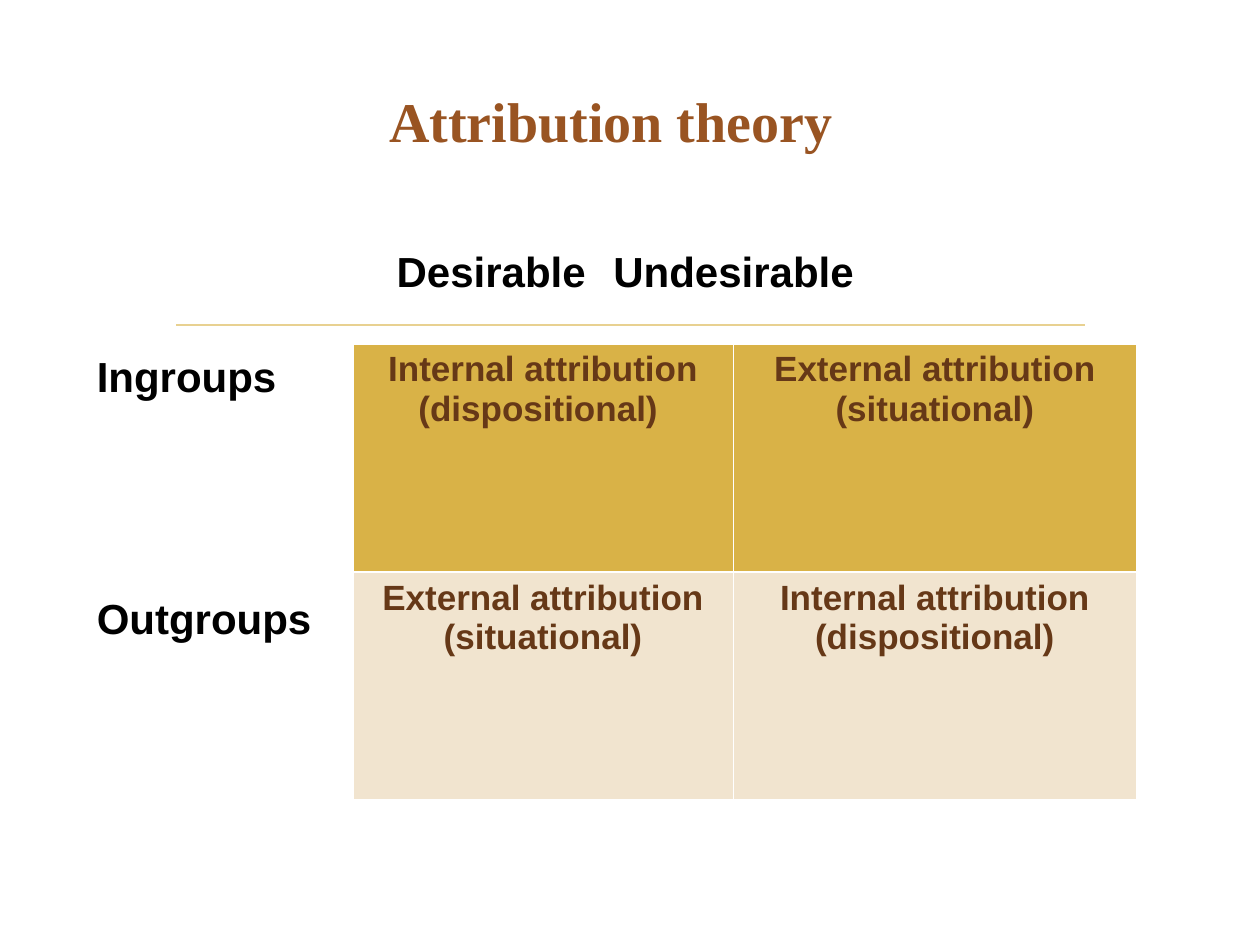
import pptx
import pptx.util
from pptx.dml.color import RGBColor
from pptx.enum.shapes import MSO_CONNECTOR
from pptx.enum.text import MSO_ANCHOR, PP_ALIGN
from pptx.oxml import parse_xml
from pptx.oxml.ns import nsdecls
from pptx.util import Inches, Pt

# Content
TITLE = "Attribution theory"
COLUMNS = ["Desirable", "Undesirable"]
GROUPS = ["Ingroups", "Outgroups"]
INTERNAL = "Internal attribution\n(dispositional)"
EXTERNAL = "External attribution\n(situational)"
CELLS = [[INTERNAL + " ", EXTERNAL], [EXTERNAL, INTERNAL]]

RUST = RGBColor(0x99, 0x54, 0x22)
BROWN = RGBColor(0x66, 0x38, 0x17)
BLACK = RGBColor(0, 0, 0)
SAND = RGBColor(0xE8, 0xD1, 0x91)
ROW_FILLS = [RGBColor(0xD9, 0xB2, 0x47), RGBColor(0xF1, 0xE4, 0xCF)]
COL_WIDTHS = [3.02, 3.2]
ROW_HEIGHT = 1.81


def style(tf, size, color, name="Arial", align=None):
    for p in tf.paragraphs:
        p.alignment = align
        for r in p.runs:
            r.font.size, r.font.name, r.font.bold = Pt(size), name, True
            r.font.color.rgb = color


def add_label(s, text, left, top, width, height):
    tf = s.shapes.add_textbox(*map(Inches, (left, top, width, height))).text_frame
    tf.word_wrap = True
    tf.text = text
    style(tf, 24, BLACK)
    return tf


def add_borders(cell):
    tcPr = cell._tc.get_or_add_tcPr()
    for i, side in enumerate(("lnL", "lnR", "lnT", "lnB")):
        tcPr.insert(i, parse_xml(
            f'<a:{side} {nsdecls("a")} w="{Pt(1)}"><a:solidFill>'
            f'<a:srgbClr val="FFFFFF"/></a:solidFill></a:{side}>'))


prs = pptx.Presentation()
prs.slide_width, prs.slide_height = Inches(10), Inches(7.5)
s = prs.slides.add_slide(prs.slide_layouts[5])

# Rule under the column headings
rule = s.shapes.add_connector(MSO_CONNECTOR.STRAIGHT, Inches(1.4), Inches(2.58),
                              Inches(8.61), Inches(2.58))
rule.line.color.rgb, rule.line.width = SAND, Pt(1.25)
rule._element.spPr.append(parse_xml(f'<a:effectLst {nsdecls("a")}/>'))

# Title
title = s.shapes.title
title.left, title.top = Inches(1.01), Inches(0.36)
title.width, title.height = Inches(7.68), Inches(1.18)
title.text_frame.text = TITLE
title.text_frame.vertical_anchor = MSO_ANCHOR.MIDDLE
style(title.text_frame, 32, RUST, "Times New Roman", PP_ALIGN.CENTER)

# Attribution table
table = s.shapes.add_table(
    len(CELLS), len(COL_WIDTHS), Inches(2.8), Inches(2.73),
    Inches(sum(COL_WIDTHS)), Inches(ROW_HEIGHT * len(CELLS))).table
table.first_row = table.horz_banding = False
for col, width in zip(table.columns, COL_WIDTHS):
    col.width = Inches(width)
for row, texts, fill in zip(table.rows, CELLS, ROW_FILLS):
    row.height = Inches(ROW_HEIGHT)
    for cell, text in zip(row.cells, texts):
        cell.text_frame.text = text
        style(cell.text_frame, 20, BROWN, align=PP_ALIGN.CENTER)
        cell.fill.solid()
        cell.fill.fore_color.rgb = fill
        add_borders(cell)

# Row labels
tf = add_label(s, "\n".join(GROUPS), 0.67, 2.73, 2.36, 3.33)
tf.paragraphs[1].space_before = Pt(109.5)

# Column headings, the second one on a tab stop
tf = add_label(s, "\t".join(COLUMNS), 2.77, 1.9, 6.2, 0.47)
pPr = tf.paragraphs[0]._p.get_or_add_pPr()
pPr.set("marL", "0")
pPr.set("indent", str(Inches(0.28)))
pPr.append(parse_xml(f'<a:tabLst {nsdecls("a")}>'
                     f'<a:tab pos="{Inches(3.63)}" algn="l"/></a:tabLst>'))

prs.save("out.pptx")
